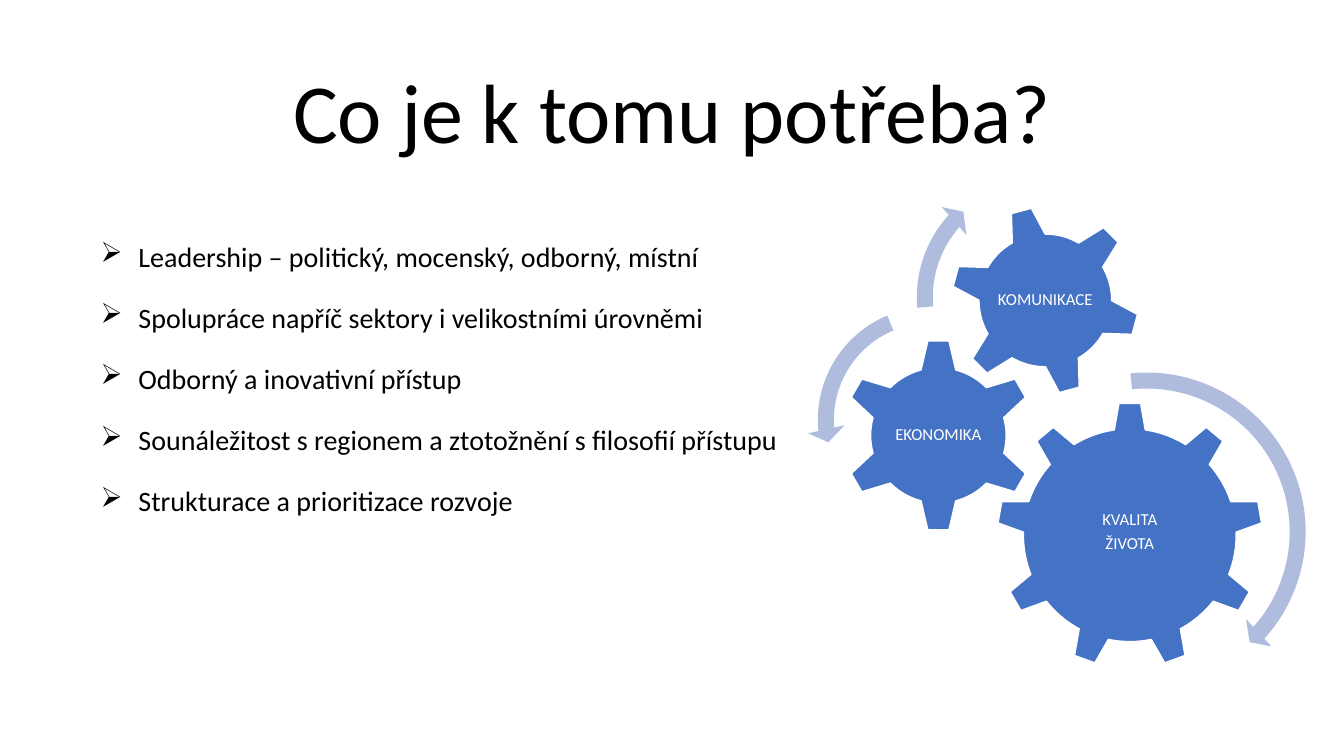
from dataclasses import dataclass

from lxml import etree
from pptx import Presentation
from pptx.dml.color import RGBColor
from pptx.enum.shapes import MSO_SHAPE
from pptx.enum.text import MSO_ANCHOR, PP_ALIGN
from pptx.oxml.ns import qn
from pptx.shapes.autoshape import Shape
from pptx.slide import Slide
from pptx.util import Pt

GEAR_6, GEAR_9 = MSO_SHAPE.GEAR_6, MSO_SHAPE.GEAR_9
CLOCKWISE, COUNTER = MSO_SHAPE.CIRCULAR_ARROW, MSO_SHAPE.LEFT_CIRCULAR_ARROW
TOP, MIDDLE, BOTTOM = MSO_ANCHOR.TOP, MSO_ANCHOR.MIDDLE, MSO_ANCHOR.BOTTOM
CENTER, JUSTIFY = PP_ALIGN.CENTER, PP_ALIGN.JUSTIFY


@dataclass(frozen=True)
class Theme:
    font: str = "Calibri"
    text: RGBColor = RGBColor(0x00, 0x00, 0x00)
    light: RGBColor = RGBColor(0xFF, 0xFF, 0xFF)
    gear: RGBColor = RGBColor(0x44, 0x72, 0xC4)
    arrow: RGBColor = RGBColor(0xB0, 0xBC, 0xDE)
    title_size: float = 60
    body_size: float = 20
    label_size: float = 12


THEME = Theme()


@dataclass(frozen=True)
class Box:
    left: float
    top: float
    width: float
    height: float


@dataclass(frozen=True)
class TextStyle:
    size: float
    color: RGBColor
    align: PP_ALIGN
    anchor: MSO_ANCHOR
    line_spacing: float
    before: float = 0
    after: float = 0
    inset: float | None = None
    bullet: str = ""
    indent: float = 0


@dataclass(frozen=True)
class Gear:
    kind: MSO_SHAPE
    left: float
    top: float
    size: float
    label: tuple[str, ...]
    label_width: float
    label_height: float
    label_rise: float = 0
    rotation: float = 0


@dataclass(frozen=True)
class Arrow:
    kind: MSO_SHAPE
    left: float
    top: float
    size: float
    adjustments: tuple[float, ...]


TITLE_STYLE = TextStyle(THEME.title_size, THEME.text, CENTER, BOTTOM, 0.9)
BODY_STYLE = TextStyle(THEME.body_size, THEME.text, JUSTIFY, TOP, 1.07,
                       before=10, after=8, bullet="➢", indent=27)
LABEL_STYLE = TextStyle(THEME.label_size, THEME.light, CENTER, MIDDLE, 0.9,
                        after=4.2, inset=1.2)

TITLE = ("Co je k tomu potřeba?",)
NEEDS = (
    "Leadership – politický, mocenský, odborný, místní",
    "Spolupráce napříč sektory i velikostními úrovněmi",
    "Odborný a inovativní přístup",
    "Sounáležitost s regionem a ztotožnění s filosofií přístupu",
    "Strukturace a prioritizace rozvoje",
)
GEARS = (
    Gear(GEAR_9, 712, 287.3, 190, ("KVALITA", "ŽIVOTA"), 113.8, 97.2, label_rise=2.5),
    Gear(GEAR_6, 601.2, 241.9, 138.2, ("EKONOMIKA",), 68.4, 68.4),
    Gear(GEAR_6, 679, 146.9, 135.4, ("KOMUNIKACE",), 75.6, 75.6, rotation=345),
)
# Ring thickness, head angle, end angle, start angle, head width.
ARROWS = (
    Arrow(CLOCKWISE, 697.7, 258.5, 242.6, (0.047, 2.99, 25.205, 158.52, 0.055)),
    Arrow(COUNTER, 576.7, 211.7, 176.4, (0.065, 4.3, 104.891, 148.378, 0.075)),
    Arrow(CLOCKWISE, 647.3, 117.4, 190, (0.06, 3.941, 133.138, 105.082, 0.07)),
)


def add_text(s: Slide, box: Box, lines: tuple[str, ...], style: TextStyle) -> None:
    sp = s.shapes.add_textbox(Pt(box.left), Pt(box.top), Pt(box.width), Pt(box.height))
    tf = sp.text_frame
    tf.word_wrap = True
    tf.vertical_anchor = style.anchor
    if style.inset is not None:
        for side in ("left", "top", "right", "bottom"):
            setattr(tf, f"margin_{side}", Pt(style.inset))
    paragraph_format = {
        "alignment": style.align,
        "line_spacing": style.line_spacing,
        "space_before": Pt(style.before),
        "space_after": Pt(style.after),
    }
    font_format = {"name": THEME.font, "size": Pt(style.size)}
    for i, line in enumerate(lines):
        p = tf.add_paragraph() if i else tf.paragraphs[0]
        for name, value in paragraph_format.items():
            setattr(p, name, value)
        r = p.add_run()
        r.text = line
        for name, value in font_format.items():
            setattr(r.font, name, value)
        r.font.color.rgb = style.color
        if style.bullet:
            pPr = p._p.get_or_add_pPr()
            pPr.set("marL", str(Pt(style.indent)))
            pPr.set("indent", str(-Pt(style.indent)))
            etree.SubElement(pPr, qn("a:buChar")).set("char", style.bullet)


def add_square_shape(s: Slide, item: Gear | Arrow, color: RGBColor) -> Shape:
    size = Pt(item.size)
    sp = s.shapes.add_shape(item.kind, Pt(item.left), Pt(item.top), size, size)
    sp.shadow.inherit = False
    sp.fill.solid()
    sp.fill.fore_color.rgb = color
    return sp


def add_gear(s: Slide, gear: Gear) -> None:
    """Draw a gear with its upright label centred over it."""
    sp = add_square_shape(s, gear, THEME.gear)
    sp.rotation = gear.rotation
    sp.line.color.rgb = THEME.light
    sp.line.width = Pt(1)
    box = Box(
        gear.left + (gear.size - gear.label_width) / 2,
        gear.top + (gear.size - gear.label_height) / 2 - gear.label_rise,
        gear.label_width,
        gear.label_height,
    )
    add_text(s, box, gear.label, LABEL_STYLE)


def add_arrow(s: Slide, arrow: Arrow) -> None:
    sp = add_square_shape(s, arrow, THEME.arrow)
    sp.line.fill.background()
    for i, value in enumerate(arrow.adjustments):
        sp.adjustments[i] = value


def main() -> None:
    prs = Presentation()
    prs.slide_width, prs.slide_height = Pt(960), Pt(540)
    s = prs.slides.add_slide(prs.slide_layouts[6])
    add_text(s, Box(120, 35.3, 720, 83.5), TITLE, TITLE_STYLE)
    add_text(s, Box(64.8, 165.6, 720, 307.4), NEEDS, BODY_STYLE)
    for gear in GEARS:
        add_gear(s, gear)
    for arrow in ARROWS:
        add_arrow(s, arrow)
    prs.save("out.pptx")


if __name__ == "__main__":
    main()
